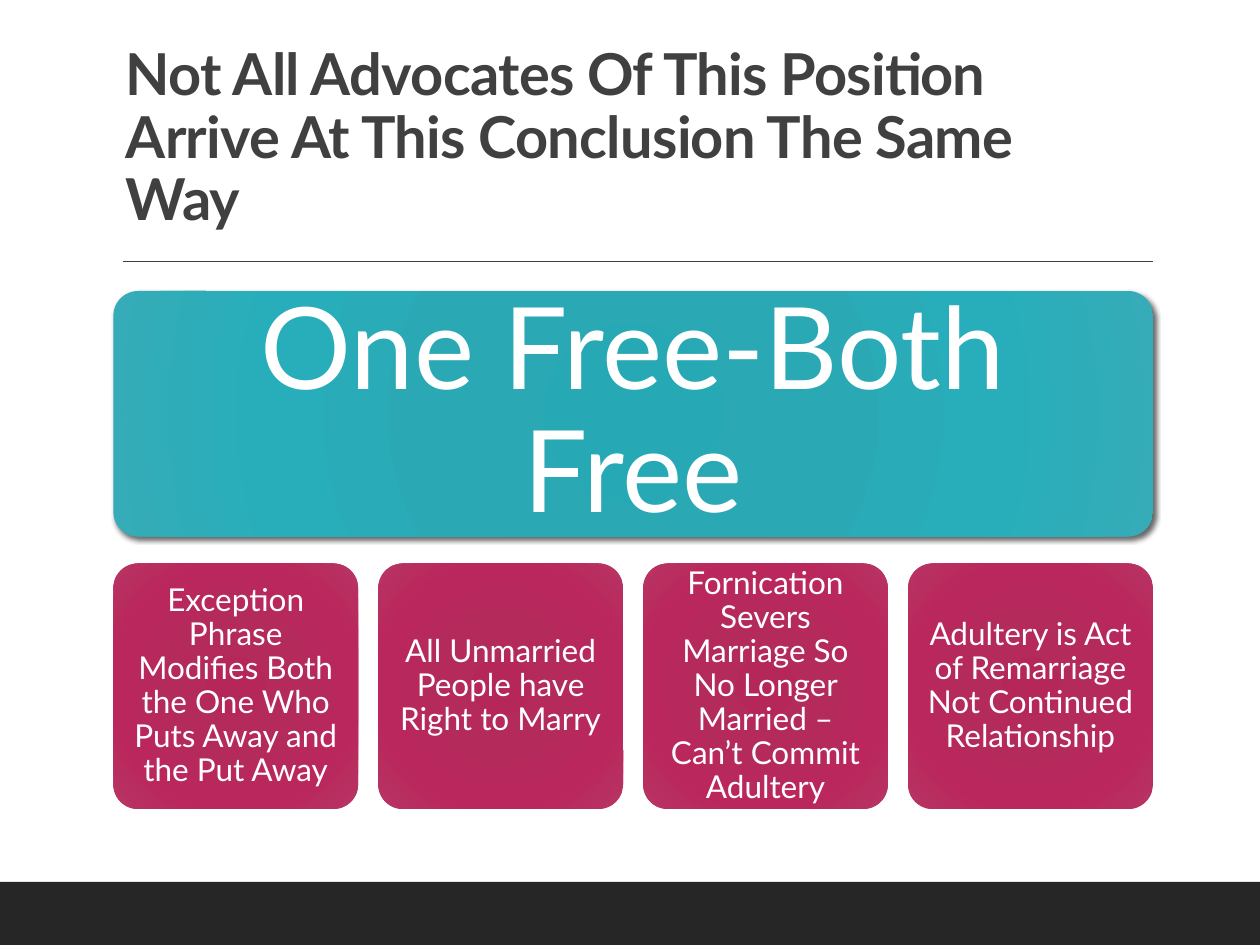
import pptx
import pptx.dml.color
import pptx.enum.shapes
import pptx.enum.text
import pptx.oxml
import pptx.oxml.ns
import pptx.util

Pt = pptx.util.Pt
SHAPES = pptx.enum.shapes.MSO_SHAPE
CENTER = pptx.enum.text.PP_ALIGN.CENTER
LEFT = pptx.enum.text.PP_ALIGN.LEFT

# Content
TITLE = "Not All Advocates Of This Position Arrive At This Conclusion The Same Way"
BANNER = "One Free-Both Free"
REASONS = [
    "Exception Phrase Modifies Both the One Who Puts Away and the Put Away",
    "All Unmarried People have Right to Marry",
    "Fornication Severs Marriage So No Longer Married – Can’t Commit Adultery",
    "Adultery is Act of Remarriage Not Continued Relationship",
]

THEME = {
    "font": "Lato",
    "ink": "404040",
    "footer": "262626",
    "light": "FFFFFF",
    "teal": [(0, "26A9B5"), (34, "2AA9B4"), (70, "27AEBA"), (100, "35ACB7")],
    "berry": [(0, "B52659"), (34, "B42A5B"), (70, "BA275C"), (100, "B73563")],
    "title_size": 33,
    "banner_size": 65,
    "reason_size": 18,
}

# Layout, in points
SLIDE_W, SLIDE_H = 720, 540
CONTENT_LEFT, CONTENT_W = 64.8, 594
BANNER_TOP, REASONS_TOP, BLOCK_H = 166.3, 322, 140.3
REASON_GAP = 11.5
FOOTER_H = 36

A_NS = pptx.oxml.ns.nsdecls("a")


def rgb(value):
    return pptx.dml.color.RGBColor.from_string(value)


def write(frame, text, size, color, align, inset=None, bold=False):
    frame.word_wrap = True
    frame.vertical_anchor = pptx.enum.text.MSO_ANCHOR.MIDDLE
    if inset is not None:
        frame.margin_left = frame.margin_right = Pt(inset)
        frame.margin_top = frame.margin_bottom = Pt(inset)
    paragraph = frame.paragraphs[0]
    paragraph.alignment = align
    paragraph.line_spacing = 0.9
    run = paragraph.add_run()
    run.text = text
    run.font.name = THEME["font"]
    run.font.size = Pt(size)
    run.font.bold = bold
    run.font.color.rgb = rgb(color)
    return run


def add_plain_shape(slide, kind, left, top, width, height):
    shape = slide.shapes.add_shape(kind, Pt(left), Pt(top), Pt(width), Pt(height))
    shape.shadow.inherit = False
    shape.line.fill.background()
    return shape


def fill_radial(shape, stops):
    shape.fill.gradient()
    stop_xml = "".join(
        f'<a:gs pos="{pos * 1000}"><a:srgbClr val="{color}"/></a:gs>'
        for pos, color in stops
    )
    radial = pptx.oxml.parse_xml(
        f'<a:gradFill {A_NS} rotWithShape="1"><a:gsLst>{stop_xml}</a:gsLst>'
        '<a:path path="circle"><a:fillToRect l="100000" t="100000" '
        'r="100000" b="100000"/></a:path></a:gradFill>'
    )
    properties = shape.element.spPr
    properties.replace(properties.find(pptx.oxml.ns.qn("a:gradFill")), radial)


def add_block(slide, left, top, width, text, size, stops, inset):
    block = add_plain_shape(
        slide, SHAPES.ROUNDED_RECTANGLE, left, top, width, BLOCK_H)
    block.adjustments[0] = 0.1
    fill_radial(block, stops)
    write(block.text_frame, text, size, THEME["light"], CENTER, inset)
    return block


def add_drop_shadow(shape):
    effects = shape.element.spPr.find(pptx.oxml.ns.qn("a:effectLst"))
    effects.append(pptx.oxml.parse_xml(
        f'<a:outerShdw {A_NS} blurRad="{Pt(3)}" dist="{Pt(2)}" dir="2700000" '
        'algn="br" rotWithShape="0"><a:srgbClr val="000000">'
        '<a:alpha val="60000"/></a:srgbClr></a:outerShdw>'
    ))


def main():
    deck = pptx.Presentation()
    deck.slide_width, deck.slide_height = Pt(SLIDE_W), Pt(SLIDE_H)
    slide = deck.slides.add_slide(deck.slide_layouts[6])

    # Footer band
    footer = add_plain_shape(
        slide, SHAPES.RECTANGLE, 0, SLIDE_H - FOOTER_H, SLIDE_W, FOOTER_H)
    footer.fill.solid()
    footer.fill.fore_color.rgb = rgb(THEME["footer"])

    # Rule under the title
    rule = slide.shapes.add_connector(
        pptx.enum.shapes.MSO_CONNECTOR.STRAIGHT,
        Pt(70.4), Pt(149.5), Pt(CONTENT_LEFT + CONTENT_W), Pt(149.5))
    rule.line.color.rgb = rgb(THEME["ink"])
    rule.line.width = Pt(1)
    rule.element.spPr.append(pptx.oxml.parse_xml(f"<a:effectLst {A_NS}/>"))

    # Title
    title = slide.shapes.add_textbox(
        Pt(CONTENT_LEFT), Pt(22.5), Pt(CONTENT_W), Pt(114.5))
    title_run = write(title.text_frame, TITLE, THEME["title_size"],
                      THEME["ink"], LEFT, bold=True)
    title_run.font._element.set("spc", "-40")

    # Banner
    banner = add_block(slide, CONTENT_LEFT, BANNER_TOP, CONTENT_W, BANNER,
                       THEME["banner_size"], THEME["teal"], 19.5)
    add_drop_shadow(banner)

    # Row of reasons, spread evenly under the banner
    count = len(REASONS)
    reason_w = (CONTENT_W - REASON_GAP * (count - 1)) / count
    for index, reason in enumerate(REASONS):
        left = CONTENT_LEFT + index * (reason_w + REASON_GAP)
        add_block(slide, left, REASONS_TOP, reason_w, reason,
                  THEME["reason_size"], THEME["berry"], 5.4)

    deck.save("out.pptx")


if __name__ == "__main__":
    main()
